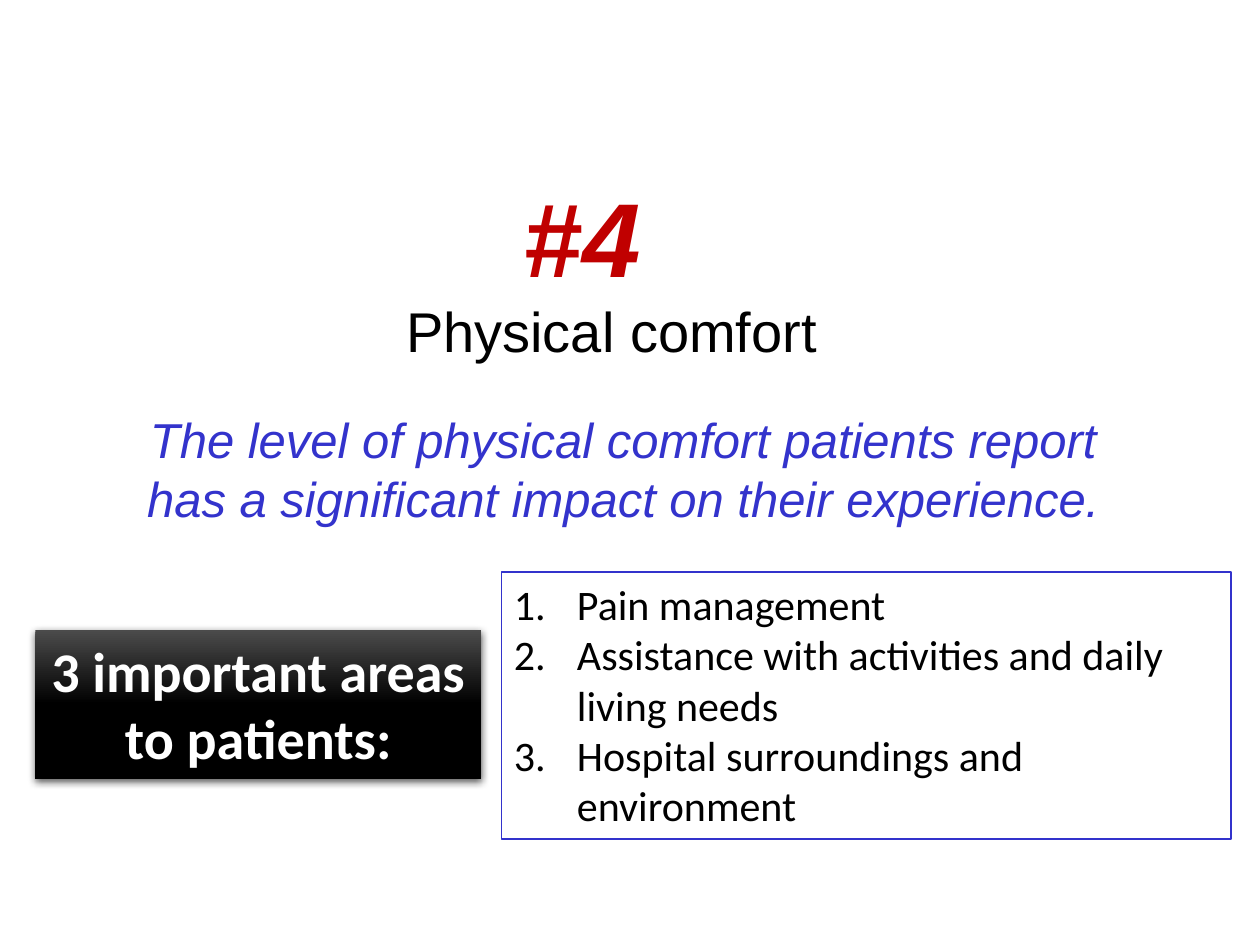
from dataclasses import dataclass

import pptx
import pptx.dml.color
import pptx.enum.shapes
import pptx.enum.text
import pptx.oxml
import pptx.oxml.ns
import pptx.util
from pptx.util import Pt

COLOURS = {
    "black": "000000",
    "white": "FFFFFF",
    "grey": "4B4B4B",
    "red": "C00000",
    "blue": "3333CC",
}
ALIGN = pptx.enum.text.PP_ALIGN


@dataclass(frozen=True)
class Block:
    lines: tuple[str, ...]
    left: float
    top: float
    width: float
    height: float
    size: float
    colour: str
    font: str = "Arial"
    bold: bool = False
    italic: bool = False
    align: ALIGN = ALIGN.CENTER
    numbered: bool = False


TITLE = Block(("Physical comfort",), 57.6, 165.6, 583.9, 46.1, 32, "black")
NUMBER = Block(("#4",), 292.3, 95, 136.1, 79.9, 60, "red",
               bold=True, italic=True, align=ALIGN.LEFT)
SUMMARY = Block(
    ("The level of physical comfort patients report has a significant "
     "impact on their experience.",),
    70.6, 230.4, 571, 74.9, 28, "blue", italic=True)
AREAS_LABEL = Block(("3 important areas to patients:",),
                    20.2, 360, 254.9, 85, 32, "white", "Calibri", bold=True)
AREAS = Block(
    ("Pain management",
     "Assistance with activities and daily living needs",
     "Hospital surroundings and environment"),
    286.6, 326.9, 416.9, 152.6, 24, "black", "Calibri",
    align=ALIGN.LEFT, numbered=True)


def rgb(name: str) -> pptx.dml.color.RGBColor:
    return pptx.dml.color.RGBColor.from_string(COLOURS[name])


def add_number(para) -> None:
    properties = para._p.get_or_add_pPr()
    properties.set("marL", str(Pt(36)))
    properties.set("indent", str(-Pt(36)))
    for tag, key, value in (("a:buFont", "typeface", "+mj-lt"),
                            ("a:buAutoNum", "type", "arabicPeriod")):
        bullet = pptx.oxml.parse_xml(
            f'<{tag} {pptx.oxml.ns.nsdecls("a")} {key}="{value}"/>')
        properties.append(bullet)


def write(shape, block: Block) -> None:
    """Place the shape and fill it with the block's paragraphs."""
    shape.left, shape.top = Pt(block.left), Pt(block.top)
    shape.width, shape.height = Pt(block.width), Pt(block.height)
    frame = shape.text_frame
    frame.word_wrap = True
    frame.auto_size = pptx.enum.text.MSO_AUTO_SIZE.SHAPE_TO_FIT_TEXT
    frame.vertical_anchor = pptx.enum.text.MSO_ANCHOR.TOP
    frame.text = "\n".join(block.lines)
    for para in frame.paragraphs:
        para.alignment = block.align
        if block.numbered:
            add_number(para)
        font = para.font
        font.name, font.size = block.font, Pt(block.size)
        font.bold, font.italic = block.bold, block.italic
        font.color.rgb = rgb(block.colour)


def add_text(page, block: Block) -> None:
    write(page.shapes.add_textbox(0, 0, Pt(1), Pt(1)), block)


def add_panel(page, block: Block):
    panel = page.shapes.add_shape(
        pptx.enum.shapes.MSO_SHAPE.RECTANGLE, 0, 0, Pt(1), Pt(1))
    panel.shadow.inherit = False
    write(panel, block)
    return panel


def shade(panel) -> None:
    """Give the panel a vertical three-stop gradient and a soft shadow."""
    panel.line.fill.background()
    panel.fill.gradient()
    panel.fill.gradient_angle = 270
    stops = panel._element.spPr.find(".//" + pptx.oxml.ns.qn("a:gsLst"))
    stops.clear()
    namespace = pptx.oxml.ns.nsdecls("a")
    for percent, name in ((0, "grey"), (50, "black"), (100, "black")):
        stops.append(pptx.oxml.parse_xml(
            f'<a:gs {namespace} pos="{percent * 1000}">'
            f'<a:srgbClr val="{COLOURS[name]}"/></a:gs>'))
    effects = panel._element.spPr.find(pptx.oxml.ns.qn("a:effectLst"))
    effects.append(pptx.oxml.parse_xml(
        f'<a:outerShdw {namespace} blurRad="{Pt(4.5)}" dist="{Pt(1.5)}" '
        f'dir="5400000" rotWithShape="0"><a:srgbClr val="{COLOURS["black"]}">'
        '<a:alpha val="63000"/></a:srgbClr></a:outerShdw>'))


def main() -> None:
    deck = pptx.Presentation()
    deck.slide_width, deck.slide_height = Pt(720), Pt(540)
    page = deck.slides.add_slide(deck.slide_layouts.get_by_name("Title Only"))
    write(page.shapes.title, TITLE)
    add_text(page, NUMBER)
    add_text(page, SUMMARY)
    shade(add_panel(page, AREAS_LABEL))
    areas = add_panel(page, AREAS)
    areas.fill.solid()
    areas.fill.fore_color.rgb = rgb("white")
    areas.line.color.rgb = rgb("blue")
    areas.line.width = Pt(1)
    deck.save("out.pptx")


if __name__ == "__main__":
    main()
